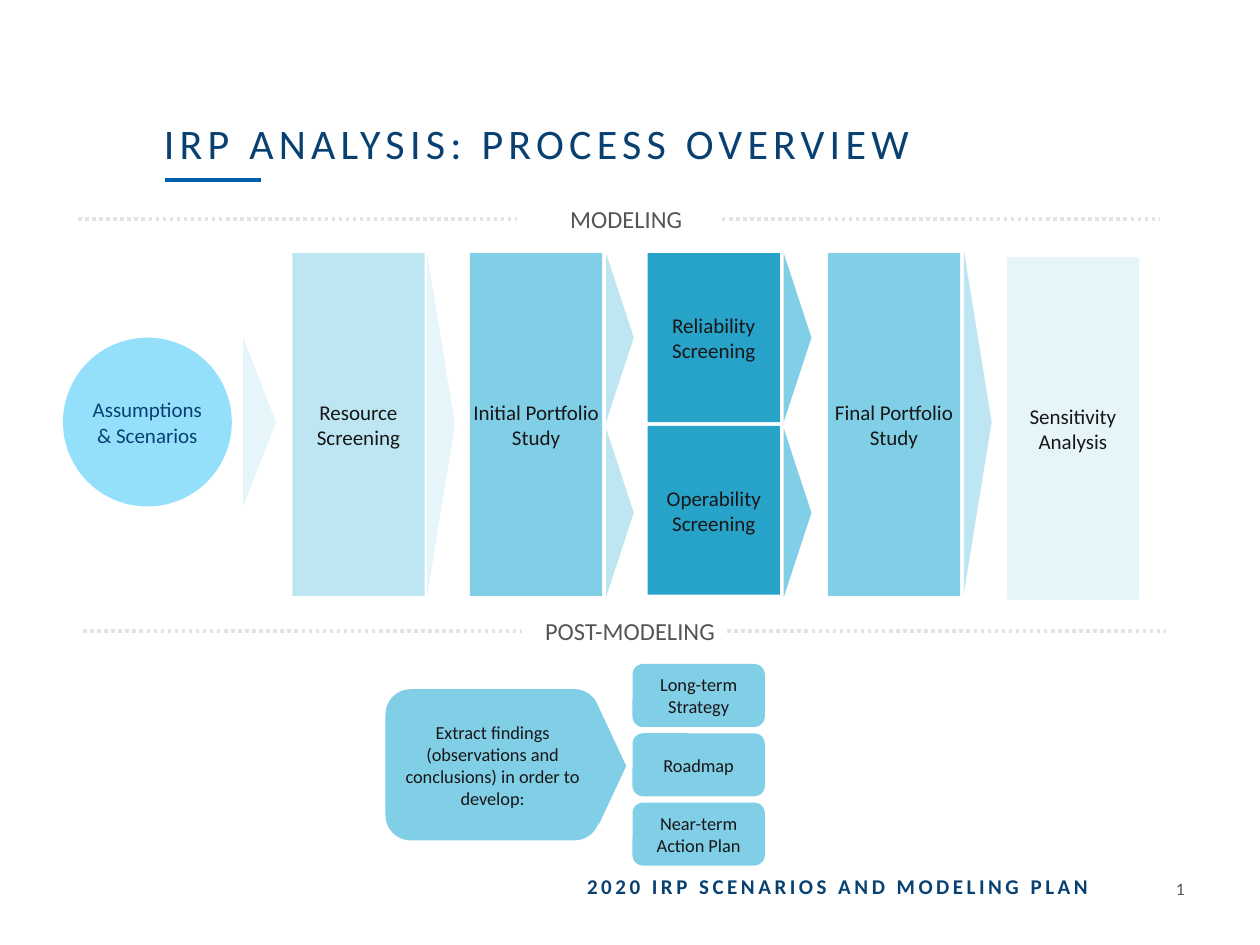
from dataclasses import dataclass

from lxml import etree
from pptx import Presentation
from pptx import util as u
from pptx.dml import color
from pptx.enum import dml, shapes, text
from pptx.oxml import ns

FONT = "Calibri"
NAVY, BLUE, GREY, INK = "084171", "005FAA", "555555", "171717"
PALE, LIGHT, MID, DEEP = "E5F5FA", "BDE6F2", "81CEE7", "27A2C9"
SKY, RULE = "94E0FB", "E4E4E4"
KIND = shapes.MSO_SHAPE
ALIGN = text.PP_ALIGN
ANCHOR = text.MSO_ANCHOR
TOP, WIDE, TALL, HALF = 2.01, 1.05, 2.72, 1.34


@dataclass
class Block:
    words: str
    left: float
    top: float
    width: float
    height: float
    fill: str
    kind: int = KIND.RECTANGLE
    size: float = 12
    ink: str = INK


@dataclass
class Arrow:
    left: float
    top: float
    height: float
    fill: str
    width: float = 0.22


@dataclass
class Label:
    words: str
    left: float
    top: float
    width: float
    height: float
    size: float
    ink: str
    align: int
    anchor: int = ANCHOR.TOP
    gap: int = 0
    bold: bool = False
    inset: bool = True
    lead: float = 1.0


@dataclass
class Line:
    left: float
    top: float
    width: float
    ink: str = RULE
    dash: bool = True


def hue(code: str) -> color.RGBColor:
    return color.RGBColor.from_string(code)


def write(frame, words: str, size: float, ink: str, align: int, anchor: int,
          inset: bool = False, gap: int = 0, bold: bool = False) -> None:
    frame.word_wrap = True
    frame.vertical_anchor = anchor
    if not inset:
        frame.margin_left = frame.margin_right = 0
        frame.margin_top = frame.margin_bottom = 0
    frame.text = words
    para = frame.paragraphs[0]
    para.alignment = align
    for run in para.runs:
        run.font.name = FONT
        run.font.size = u.Pt(size)
        run.font.bold = bold
        run.font.color.rgb = hue(ink)
        if gap:
            run.font._element.set("spc", str(gap * 100))


def add_form(slide, kind: int, left: float, top: float, width: float,
             height: float, fill: str):
    form = slide.shapes.add_shape(kind, u.Inches(left), u.Inches(top),
                                  u.Inches(width), u.Inches(height))
    form.shadow.inherit = False
    form.fill.solid()
    form.fill.fore_color.rgb = hue(fill)
    form.line.fill.background()
    return form


def add_block(slide, b: Block) -> None:
    form = add_form(slide, b.kind, b.left, b.top, b.width, b.height, b.fill)
    write(form.text_frame, b.words, b.size, b.ink, ALIGN.CENTER, ANCHOR.MIDDLE)


def add_arrow(slide, a: Arrow) -> None:
    shift = (a.height - a.width) / 2
    form = add_form(slide, KIND.ISOSCELES_TRIANGLE, a.left - shift,
                    a.top + shift, a.height, a.width, a.fill)
    form.rotation = 90


def add_label(slide, t: Label) -> None:
    box = slide.shapes.add_textbox(u.Inches(t.left), u.Inches(t.top),
                                   u.Inches(t.width), u.Inches(t.height))
    write(box.text_frame, t.words, t.size, t.ink, t.align, t.anchor,
          t.inset, t.gap, t.bold)
    box.text_frame.paragraphs[0].line_spacing = t.lead


def add_line(slide, l: Line) -> None:
    rule = slide.shapes.add_connector(
        shapes.MSO_CONNECTOR.STRAIGHT, u.Inches(l.left), u.Inches(l.top),
        u.Inches(l.left + l.width), u.Inches(l.top))
    rule.line.color.rgb = hue(l.ink)
    rule.line.width = u.Pt(2)
    if l.dash:
        rule.line.dash_style = dml.MSO_LINE.ROUND_DOT
    etree.SubElement(rule._element.spPr, ns.qn("a:effectLst"))


LINES = [Line(1.31, 1.43, 0.76, BLUE, False)] + [
    Line(left + step, top, 3.48)
    for left, top in ((0.62, 1.74), (0.66, 5.01)) for step in (0, 5.11)]

LABELS = [
    Label("IRP ANALYSIS: PROCESS OVERVIEW", 1.3, 0.29, 7.58, 1.05, 24, NAVY,
          ALIGN.LEFT, ANCHOR.BOTTOM, gap=3, inset=False, lead=0.9),
    Label("MODELING", 1.61, 1.57, 6.72, 0.34, 14, GREY, ALIGN.CENTER),
    Label("POST-MODELING", 1.64, 4.84, 6.72, 0.34, 14, GREY, ALIGN.CENTER),
    Label("2020 IRP SCENARIOS AND MODELING PLAN", 3.73, 6.88, 5.01, 0.34, 12,
          NAVY, ALIGN.RIGHT, gap=2, bold=True),
    Label("1", 8.99, 6.88, 0.51, 0.34, 10, GREY, ALIGN.RIGHT, ANCHOR.MIDDLE,
          gap=3),
]

BLOCKS = [
    Block("Assumptions & Scenarios", 0.5, 2.68, HALF, HALF, SKY, KIND.OVAL,
          ink=NAVY),
    Block("Resource Screening", 2.32, TOP, WIDE, TALL, LIGHT),
    Block("Initial Portfolio Study", 3.73, TOP, WIDE, TALL, MID),
    Block("Reliability Screening", 5.14, TOP, WIDE, HALF, DEEP),
    Block("Operability Screening", 5.14, 3.38, WIDE, HALF, DEEP),
    Block("Final Portfolio Study", 6.57, TOP, WIDE, TALL, MID),
    Block("Sensitivity Analysis", 7.99, 2.04, WIDE, TALL, PALE),
    Block("Extract findings (observations and conclusions) in order to "
          "develop:", 3.06, 5.47, 1.7, 1.2, MID, KIND.ROUNDED_RECTANGLE, 10.5),
] + [
    Block(words, 5.02, 5.27 + 0.55 * row, WIDE, 0.5, MID,
          KIND.ROUNDED_RECTANGLE, 10.5)
    for row, words in enumerate(
        ("Long-term Strategy", "Roadmap", "Near-term Action Plan"))]

ARROWS = [
    Arrow(1.93, 2.68, HALF, PALE, 0.26),
    Arrow(3.39, TOP, TALL, PALE),
    Arrow(7.65, 1.99, TALL, LIGHT),
    Arrow(4.75, 5.61, 0.94, MID),
] + [
    Arrow(left, top, HALF, fill)
    for left, fill in ((4.81, LIGHT), (6.22, MID)) for top in (TOP, 3.4)]


def main() -> None:
    deck = Presentation()
    deck.slide_width, deck.slide_height = u.Inches(10), u.Inches(7.5)
    slide = deck.slides.add_slide(deck.slide_layouts[6])
    for draw, items in ((add_line, LINES), (add_block, BLOCKS),
                        (add_arrow, ARROWS), (add_label, LABELS)):
        for item in items:
            draw(slide, item)
    deck.save("out.pptx")


if __name__ == "__main__":
    main()
